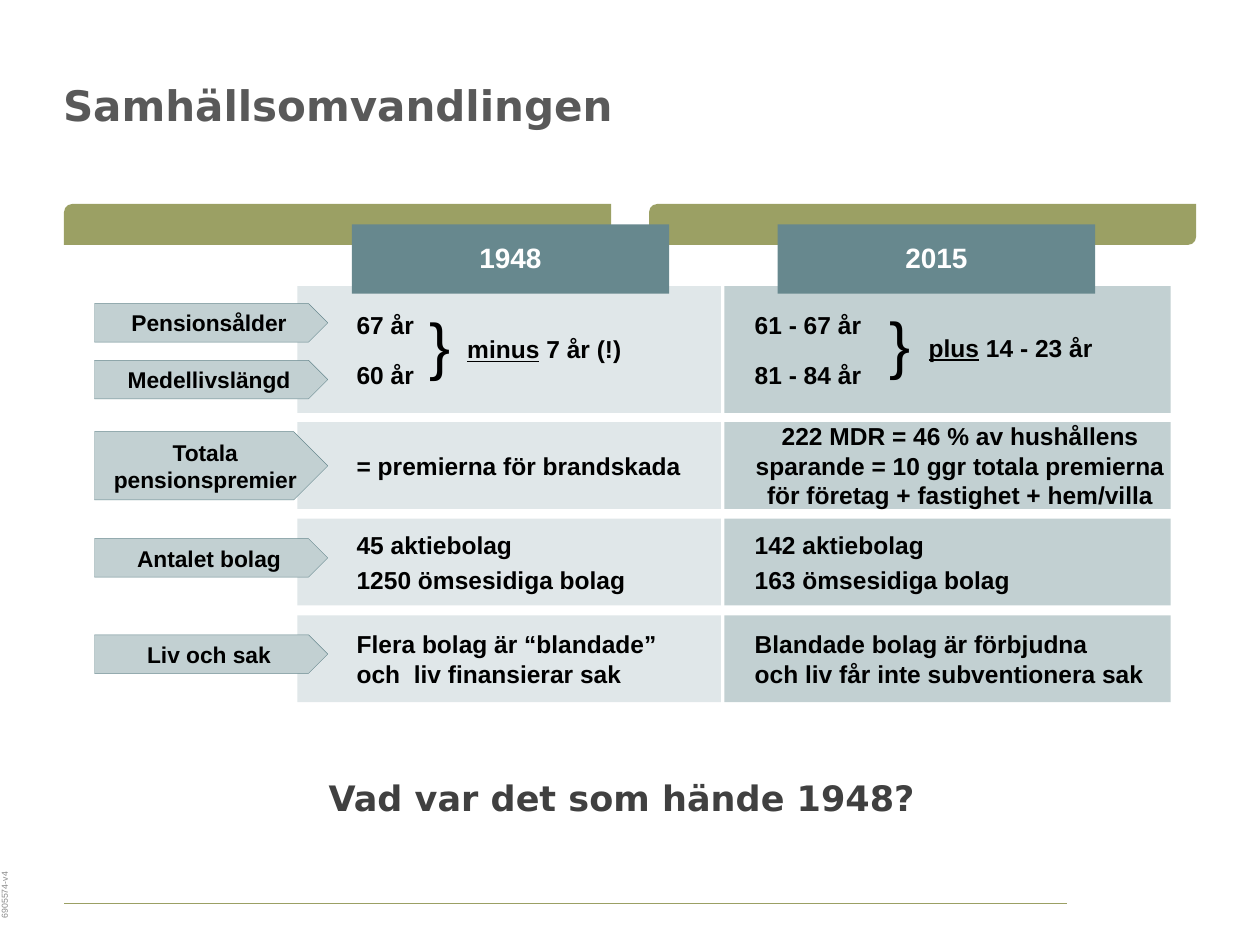
from pptx import Presentation
from pptx.dml.color import RGBColor
from pptx.enum.shapes import MSO_CONNECTOR, MSO_SHAPE
from pptx.enum.text import MSO_ANCHOR, PP_ALIGN
from pptx.oxml.ns import qn
from pptx.util import Pt
from lxml import etree

OLIVE = RGBColor(0x9B, 0xA0, 0x64)
TEAL = RGBColor(0x67, 0x88, 0x8E)
PALE = RGBColor(0xE0, 0xE7, 0xE9)
MIST = RGBColor(0xC2, 0xD0, 0xD2)
TITLE_GREY = RGBColor(0x59, 0x59, 0x59)
QUESTION_GREY = RGBColor(0x40, 0x40, 0x40)
REFERENCE_GREY = RGBColor(0x89, 0x89, 0x89)
BLACK = RGBColor(0, 0, 0)
WHITE = RGBColor(0xFF, 0xFF, 0xFF)

# Column: left, width, fill, left text inset
COLUMN_1948 = (170, 242, PALE, 33.8)
COLUMN_2015 = (414, 255, MIST, 17.3)
AGE_ROW = (163.5, 72.5)
ROW_TOP, ROW_PITCH, ROW_HEIGHT = 241.2, 55.2, 49.6

ROWS = [
    (["= premierna för brandskada"],
     ["222 MDR = 46 % av hushållens sparande = 10 ggr totala premierna "
      "för företag + fastighet + hem/villa"]),
    (["45 aktiebolag", "1250 ömsesidiga bolag"],
     ["142 aktiebolag", "163 ömsesidiga bolag"]),
    (["Flera bolag är “blandade”\voch  liv finansierar sak"],
     ["Blandade bolag är förbjudna\voch liv får inte subventionera sak"]),
]
# Label: top, height, lines
LABELS = [
    (173.5, 22, ["Pensionsålder"]),
    (205.9, 22, ["Medellivslängd"]),
    (246.7, 39, ["Totala", "pensionspremier"]),
    (307.8, 22, ["Antalet bolag"]),
    (362.8, 22, ["Liv och sak"]),
]


def set_text(shape, lines, size, color=BLACK, bold=True, font="Arial",
             align=PP_ALIGN.LEFT, anchor=MSO_ANCHOR.MIDDLE,
             insets=(7.2, 3.6, 7.2, 3.6), gap=0, spacing=None, wrap=True):
    """Fill a shape with paragraphs; a line is a string or a list of (text, underlined)."""
    frame = shape.text_frame
    frame.word_wrap = wrap
    frame.vertical_anchor = anchor
    (frame.margin_left, frame.margin_top,
     frame.margin_right, frame.margin_bottom) = map(Pt, insets)
    for index, line in enumerate(lines):
        paragraph = frame.add_paragraph() if index else frame.paragraphs[0]
        paragraph.alignment = align
        if index:
            paragraph.space_before = Pt(gap)
        if spacing:
            paragraph.line_spacing = spacing
        if isinstance(line, str):
            paragraph.text = line
        else:
            for text, underlined in line:
                run = paragraph.add_run()
                run.text = text
                run.font.underline = underlined
        paragraph.font.name = font
        paragraph.font.size = Pt(size)
        paragraph.font.bold = bold
        paragraph.font.color.rgb = color


def add_box(slide, kind, left, top, width, height, fill, outline=None):
    shape = slide.shapes.add_shape(kind, Pt(left), Pt(top), Pt(width), Pt(height))
    shape.shadow.inherit = False
    shape.fill.solid()
    shape.fill.fore_color.rgb = fill
    if outline is None:
        shape.line.fill.background()
    else:
        shape.line.color.rgb = outline
        shape.line.width = Pt(0.25)
    return shape


def add_text(slide, left, top, width, height, lines, size, **style):
    box = slide.shapes.add_textbox(Pt(left), Pt(top), Pt(width), Pt(height))
    set_text(box, lines, size, **{"anchor": MSO_ANCHOR.TOP, **style})
    return box


def add_olive_bars(slide):
    left_bar = add_box(slide, MSO_SHAPE.ROUND_1_RECTANGLE, 36.6, 116.6, 312.6, 23.4, OLIVE)
    left_bar.element.spPr.get_or_add_xfrm().set("flipH", "1")
    right_bar = add_box(slide, MSO_SHAPE.ROUND_2_DIAG_RECTANGLE, 370.9, 116.6, 312.6, 23.4, OLIVE)
    for bar in (left_bar, right_bar):
        bar.adjustments[0] = 0.2


def add_footer(slide):
    line = slide.shapes.add_connector(
        MSO_CONNECTOR.STRAIGHT, Pt(36.6), Pt(516.4), Pt(609.8), Pt(516.4))
    line.line.color.rgb = OLIVE
    line.line.width = Pt(0.75)
    etree.SubElement(line.element.spPr, qn("a:effectLst"))
    reference = add_text(slide, 0, 494.6, 13, 45.4, ["6905574-v4"], 5, bold=False,
                         color=REFERENCE_GREY, insets=(0, 3.6, 7.2, 15.1),
                         spacing=0.95, wrap=False)
    reference.text_frame._txBody.bodyPr.set("vert", "vert270")


def add_cell(slide, column, row, lines, gap=3, align=PP_ALIGN.LEFT):
    left, width, fill, inset = column
    top, height = row
    cell = add_box(slide, MSO_SHAPE.RECTANGLE, left, top, width, height, fill)
    set_text(cell, lines, 14, align=align, insets=(inset, 2.9, 2.9, 2.9), gap=gap)


def add_age_comparison(slide, column, ages, brace_left, note_left, note_width, top, note):
    add_cell(slide, column, AGE_ROW, ages, gap=12)
    add_text(slide, brace_left, top, 17.6, 49, ["}"], 36, bold=False, spacing=0.95)
    add_text(slide, note_left, top + 14.4, note_width, 23, [note], 14,
             spacing=0.95, wrap=False)


def add_header(slide, left, year):
    header = add_box(slide, MSO_SHAPE.RECTANGLE, left, 128.2, 181.4, 39.6, TEAL)
    set_text(header, [year], 16, color=WHITE, align=PP_ALIGN.CENTER,
             insets=(5.8, 0, 5.8, 0), spacing=0.95)


def add_label(slide, top, height, lines):
    label = add_box(slide, MSO_SHAPE.PENTAGON, 54, top, 133.3, height, MIST, TEAL)
    set_text(label, lines, 13, align=PP_ALIGN.CENTER, insets=(5.8, 2.9, 2.9, 2.9))


def main():
    presentation = Presentation()
    presentation.slide_width, presentation.slide_height = Pt(720), Pt(540)
    slide = presentation.slides.add_slide(presentation.slide_layouts[6])

    add_olive_bars(slide)
    add_footer(slide)
    add_text(slide, 36, 26.6, 646.6, 51.1, ["Samhällsomvandlingen"], 24,
             color=TITLE_GREY, font="DejaVu Sans", anchor=MSO_ANCHOR.BOTTOM,
             insets=(0, 3.6, 0, 3.6))

    for index, (text_1948, text_2015) in enumerate(ROWS):
        row = (ROW_TOP + index * ROW_PITCH, ROW_HEIGHT)
        add_cell(slide, COLUMN_1948, row, text_1948)
        add_cell(slide, COLUMN_2015, row, text_2015,
                 align=PP_ALIGN.LEFT if index else PP_ALIGN.CENTER)

    add_age_comparison(slide, COLUMN_1948, ["67 år", "60 år"], 238.3, 259.9, 103, 174.2,
                       [("minus", True), (" 7 år (!)", False)])
    add_age_comparison(slide, COLUMN_2015, ["61 - 67 år", "81 - 84 år"], 501.1, 523.6, 114.5,
                       173.5, [("plus", True), (" 14 - 23 år", False)])

    add_header(slide, 201, "1948")
    add_header(slide, 444.4, "2015")
    for top, height, lines in LABELS:
        add_label(slide, top, height, lines)

    add_text(slide, 54, 445.7, 609.8, 19.4, ["Vad var det som hände 1948?"], 20,
             color=QUESTION_GREY, font="DejaVu Sans", align=PP_ALIGN.CENTER,
             insets=(0, 0, 7.2, 0), spacing=0.95)

    presentation.save("out.pptx")


if __name__ == "__main__":
    main()
